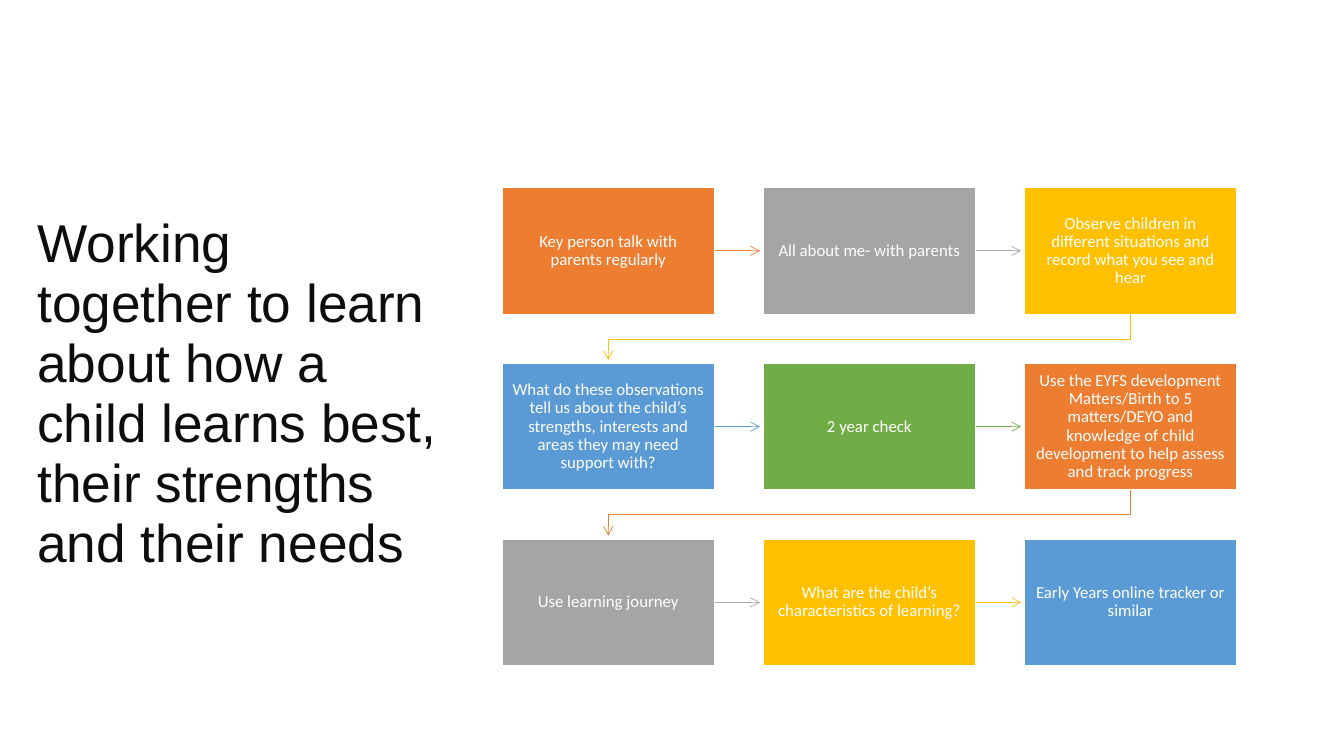
"""Build a slide with a title and a nine-step snake flow chart."""
from itertools import cycle

from lxml.etree import SubElement
from pptx import Presentation
from pptx.dml.color import RGBColor
from pptx.enum.shapes import MSO_CONNECTOR, MSO_SHAPE
from pptx.enum.text import MSO_ANCHOR, MSO_AUTO_SIZE, PP_ALIGN
from pptx.oxml.ns import qn
from pptx.util import Cm, Pt

ORANGE = RGBColor(0xED, 0x7D, 0x31)
GREY = RGBColor(0xA5, 0xA5, 0xA5)
GOLD = RGBColor(0xFF, 0xC0, 0x00)
BLUE = RGBColor(0x5B, 0x9B, 0xD5)
GREEN = RGBColor(0x70, 0xAD, 0x47)
WHITE = RGBColor(0xFF, 0xFF, 0xFF)
INK = RGBColor(0x0D, 0x0D, 0x0D)

TITLE = "Working together to learn about how a child learns best, their strengths and their needs"
STEPS = [
    "Key person talk with parents regularly",
    "All about me- with parents",
    "Observe children in different situations and record what you see and hear",
    "What do these observations tell us about the child’s strengths, interests and areas they may need support with?",
    "2 year check",
    "Use the EYFS development Matters/Birth to 5 matters/DEYO and knowledge of child development to help assess and track progress",
    "Use learning journey",
    "What are the child’s characteristics of learning?",
    "Early Years online tracker or similar",
]
COLUMNS = 3
LEFT, TOP = Cm(12.65), Cm(4.72)
WIDTH, HEIGHT = Cm(5.36), Cm(3.2)
STEP_X, STEP_Y = Cm(6.58), Cm(4.43)
ARROW_GAP = Cm(0.08)
BEND_DROP = Cm(0.62)


class FlowSlide:
    """Hold the text styles and the current slide."""

    title_frame = {"margin_left": Cm(0.25), "margin_right": Cm(0.18), "margin_top": Cm(2.28),
                   "vertical_anchor": MSO_ANCHOR.TOP}
    title_para = {"alignment": PP_ALIGN.LEFT, "line_spacing": 0.94}
    title_font = {"name": "Arial", "size": Pt(38)}
    step_frame = {"margin_left": Cm(0.25), "margin_right": Cm(0.25), "margin_top": Cm(0.28),
                  "margin_bottom": Cm(0.28), "vertical_anchor": MSO_ANCHOR.MIDDLE}
    step_para = {"alignment": PP_ALIGN.CENTER, "line_spacing": 0.9}
    step_font = {"name": "Calibri", "size": Pt(12)}

    def __init__(self, deck):
        self.page = deck.slides.add_slide(deck.slide_layouts[5])

    def apply(self, target, values):
        """Set each attribute in values on target."""
        for name, value in values.items():
            setattr(target, name, value)

    def put_text(self, box, text, frame_format, para_format, font_format, colour):
        """Put one styled paragraph into a box."""
        frame = box.text_frame
        self.apply(frame, {"word_wrap": True, "auto_size": MSO_AUTO_SIZE.NONE, **frame_format})
        para = frame.paragraphs[0]
        self.apply(para, para_format)
        span = para.add_run()
        span.text = text
        self.apply(span.font, font_format)
        span.font.color.rgb = colour

    def title(self, text):
        """Place and fill the title placeholder."""
        box = self.page.shapes.title
        self.apply(box, {"left": Cm(0.69), "top": Cm(3.12), "width": Cm(10.57), "height": Cm(15.29)})
        self.put_text(box, text, self.title_frame, self.title_para, self.title_font, INK)

    def step(self, text, left, top, colour):
        """Draw one step of the flow."""
        box = self.page.shapes.add_shape(MSO_SHAPE.RECTANGLE, left, top, WIDTH, HEIGHT)
        box.shadow.inherit = False
        box.fill.solid()
        box.fill.fore_color.rgb = colour
        box.line.color.rgb = WHITE
        box.line.width = Pt(1)
        self.put_text(box, text, self.step_frame, self.step_para, self.step_font, WHITE)
        return box

    def finish_arrow(self, arrow, colour):
        """Give a line its colour, width and open arrowhead."""
        arrow.line.color.rgb = colour
        arrow.line.width = Pt(0.5)
        SubElement(arrow.element.spPr.find(qn("a:ln")), qn("a:tailEnd"), type="arrow")

    def straight_arrow(self, box, colour):
        """Point from a step to its right-hand neighbour."""
        middle = box.top + HEIGHT // 2
        arrow = self.page.shapes.add_connector(
            MSO_CONNECTOR.STRAIGHT, box.left + WIDTH, middle, box.left + STEP_X - ARROW_GAP, middle)
        arrow.begin_connect(box, 3)
        self.finish_arrow(arrow, colour)
        SubElement(arrow.element.spPr, qn("a:effectLst"))

    def return_arrow(self, box, colour):
        """Lead from the end of one row to the start of the next."""
        start_x, start_y = box.left + WIDTH // 2, box.top + HEIGHT
        end_x, bend_y = LEFT + WIDTH // 2, start_y + BEND_DROP
        builder = self.page.shapes.build_freeform(start_x, start_y)
        builder.add_line_segments(
            [(start_x, bend_y), (end_x, bend_y), (end_x, box.top + STEP_Y - ARROW_GAP)], close=False)
        arrow = builder.convert_to_shape()
        arrow.fill.background()
        self.finish_arrow(arrow, colour)
        arrow.shadow.inherit = False


def main():
    """Build and save the deck."""
    deck = Presentation()
    deck.slide_width, deck.slide_height = Cm(33.87), Cm(19.05)
    slide = FlowSlide(deck)
    slide.title(TITLE)
    palette = cycle([ORANGE, GREY, GOLD, BLUE, GREEN])
    for index, (text, colour) in enumerate(zip(STEPS, palette)):
        row, column = divmod(index, COLUMNS)
        box = slide.step(text, LEFT + column * STEP_X, TOP + row * STEP_Y, colour)
        if column < COLUMNS - 1:
            slide.straight_arrow(box, colour)
        elif index < len(STEPS) - 1:
            slide.return_arrow(box, colour)
    deck.save("out.pptx")


if __name__ == "__main__":
    main()
